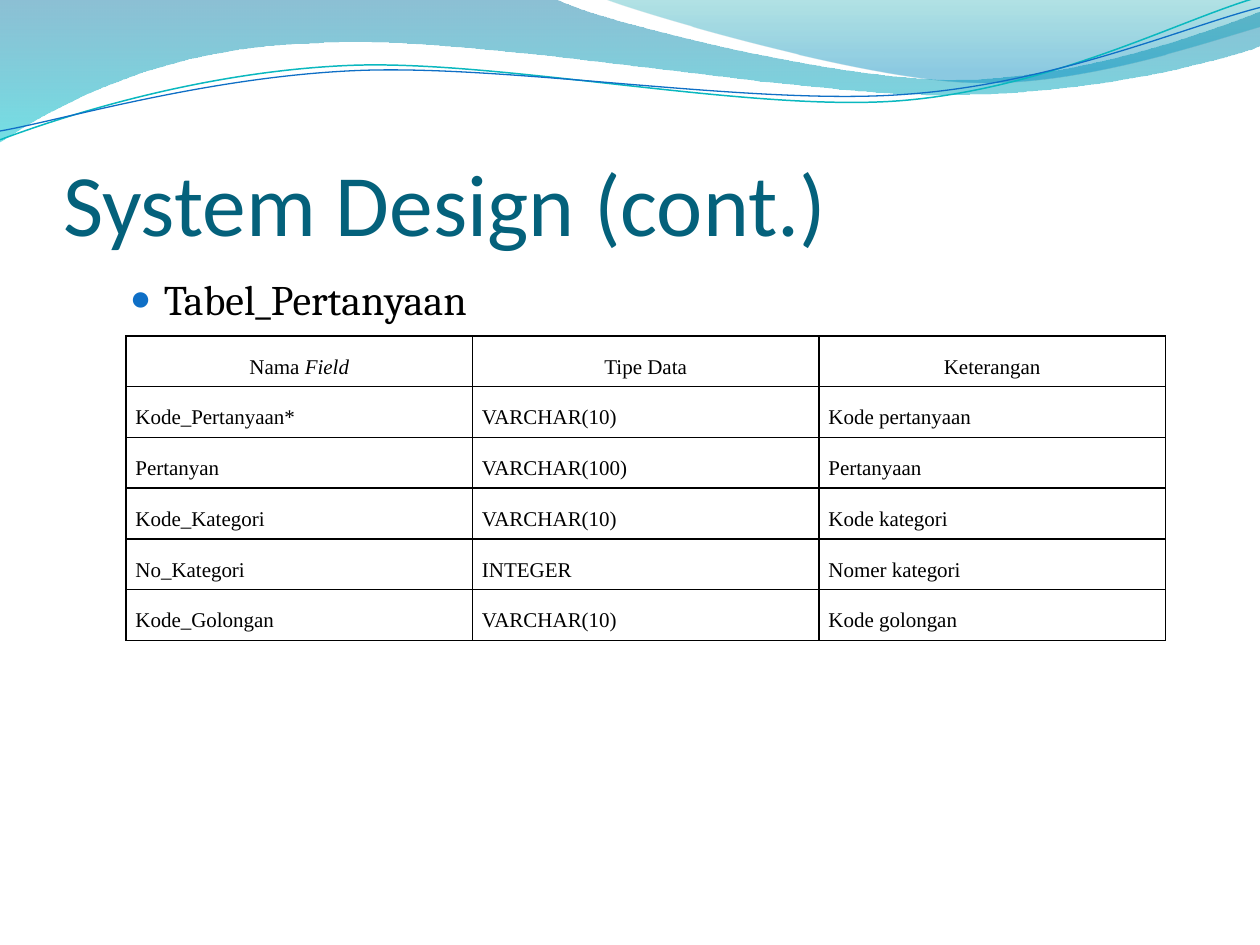
"""Build a slide with a wave banner, a title, a bullet and a table of fields."""
from math import cos, radians, sin
from lxml.etree import SubElement, fromstring
from pptx import Presentation
from pptx.dml.color import RGBColor
from pptx.enum.text import MSO_ANCHOR, MSO_AUTO_SIZE, PP_ALIGN
from pptx.oxml.ns import qn
from pptx.util import Inches, Pt

NS = 'xmlns:a="http://schemas.openxmlformats.org/drawingml/2006/main"'


def style(run, face, size, tint, **more):
    """Format a run of text."""
    run.font.color.rgb = RGBColor.from_string(tint)
    for key, val in dict(name=face, size=Pt(size), **more).items():
        setattr(run.font, key, val)


def turn(spot, hub, angle):
    """Rotate a point clockwise about a hub, into thousandths of an inch."""
    x, y = spot[0] - hub[0], spot[1] - hub[1]
    a = radians(angle)
    return (1000 * (hub[0] + x * cos(a) - y * sin(a)),
            1000 * (hub[1] + x * sin(a) + y * cos(a)))


deck = Presentation()
deck.slide_width, deck.slide_height = Inches(10), Inches(7.5)
wide = deck.slide_width
slide = deck.slides.add_slide(deck.slide_layouts[1])
tree = slide.shapes

waves = [
    ((0, 0), [(4.4, -0.01), (4.76, 0.17, 6.64, 0.63, 7.58, 0.63),
              (8.53, 0.63, 9.58, 0.26, 10, 0.09), (10.01, 0.36),
              (9.83, 0.44, 8.7, 0.76, 7.46, 0.75), (6.22, 0.75, 3.82, 0.28, 2.57, 0.34),
              (1.29, 0.36, 0.46, 0.83, -0.01, 1.13), (0, 0)],
     [(0, "0074A1", 45), (1, "00C6CF", 55)], None, (0, 0), 0),
    ((4.79, -0.01), [(5.09, 0.11, 6.82, 0.62, 7.69, 0.65),
                     (8.56, 0.69, 9.61, 0.32, 10, 0.21), (10, 0), (4.79, -0.01)],
     [(0, "00A1A9", 30), (0.8, "008BBF", 45)], None, (0, 0), 0),
    ((0, 1.11), [(0.48, 0.93, 1.58, 0.57, 2.77, 0.52), (3.95, 0.47, 5.93, 0.89, 7.13, 0.8),
                 (8.33, 0.71, 9.38, 0.15, 9.98, -0.02)],
     None, ("0AB8BF", 0.85), (4.99, 0.58), 2.7),
    ((0, 1.04), [(0.47, 0.96, 1.64, 0.61, 2.83, 0.56), (4.03, 0.51, 5.97, 0.84, 7.17, 0.75),
                 (8.36, 0.67, 9.41, 0.21, 10, 0.06)],
     None, ("0F6FC6", 0.75), (5, 0.59), 2.7),
]
for rank, (start, legs, stops, pen, hub, tilt) in enumerate(waves):
    pts = [turn(p, hub, tilt) for leg in legs for p in zip(leg[::2], leg[1::2])]
    draft = tree.build_freeform(*turn(start, hub, tilt), scale=914.4)
    draft.add_line_segments(pts, close=bool(stops))
    wave = draft.convert_to_shape()
    wave.shadow.inherit = False
    wave.rotation = -tilt % 360
    nodes = iter(list(wave._element.iter(qn("a:lnTo"))))
    for leg in legs:
        trio = [next(nodes) for _ in leg[::2]]
        if len(trio) == 3:
            curve = fromstring(f"<a:cubicBezTo {NS}/>")
            trio[0].addprevious(curve)
            for node in trio:
                curve.append(node[0])
                node.getparent().remove(node)
    if stops:
        wave.line.fill.background()
        wave.fill.gradient()
        wave.fill.gradient_angle = 270
        for stop, (spot, tint, _) in zip(wave.fill.gradient_stops, stops):
            stop.position = spot
            stop.color.rgb = RGBColor.from_string(tint)
        for node, (_, _, alpha) in zip(wave._element.iter(qn("a:gs")), stops):
            SubElement(node[0], qn("a:alpha"), val=str(alpha * 1000))
    else:
        wave.fill.background()
        wave.line.color.rgb = RGBColor.from_string(pen[0])
        wave.line.width = Pt(pen[1])
    tree._spTree.insert(2 + rank, wave._element)

title, body = tree.title, tree.placeholders[1]
for box, top, tall in ((title, 0.77, 1.25), (body, 2.12, 4.8)):
    box.left, box.top = int(wide * 0.05), Inches(top)
    box.width, box.height = int(wide * 0.9), Inches(tall)
    box.text_frame.auto_size = MSO_AUTO_SIZE.NONE

frame = title.text_frame
look = dict(margin_left=0, margin_right=0, margin_top=Inches(0.05), margin_bottom=0,
            vertical_anchor=MSO_ANCHOR.BOTTOM)
for key, val in look.items():
    setattr(frame, key, val)
head = frame.paragraphs[0]
head.alignment = PP_ALIGN.LEFT
head.add_run().text = "System Design (cont.)"
style(head.runs[0], "Calibri", 50, "04617B")

item = body.text_frame.paragraphs[0]
item.level = 1
item.add_run().text = "Tabel_Pertanyaan"
style(item.runs[0], "Cambria", 24, "000000")
props = item._p.get_or_add_pPr()
props.set("marL", str(Inches(0.7)))
props.set("indent", str(Inches(-0.27)))
for mark in ('<a:buClr {}><a:srgbClr val="0F6FC6"/></a:buClr>', '<a:buSzPct {} val="85000"/>',
             '<a:buFont {} typeface="Arial"/>', '<a:buChar {} char="●"/>'):
    props.append(fromstring(mark.format(NS)))

rows = [
    ("Nama Field", "Tipe Data", "Keterangan"),
    ("Kode_Pertanyaan*", "VARCHAR(10)", "Kode pertanyaan"),
    ("Pertanyan", "VARCHAR(100)", "Pertanyaan"),
    ("Kode_Kategori", "VARCHAR(10)", "Kode kategori"),
    ("No_Kategori", "INTEGER", "Nomer kategori"),
    ("Kode_Golongan", "VARCHAR(10)", "Kode golongan"),
]
grid = tree.add_table(len(rows), 3, int(wide * 0.1), Pt(192),
                      Inches(8.25), Pt(174)).table
grid.first_row = grid.horz_banding = False
look = dict(margin_left=Pt(5.4), margin_right=Pt(5.4), margin_top=0,
            margin_bottom=0, vertical_anchor=MSO_ANCHOR.MIDDLE)
for r, row in enumerate(rows):
    for c, text in enumerate(row):
        cell = grid.cell(r, c)
        for key, val in look.items():
            setattr(cell, key, val)
        cell.fill.background()
        for spot, side in enumerate("LRTB"):
            cell._tc.get_or_add_tcPr().insert(spot, fromstring(
                f'<a:ln{side} {NS} w="12700"><a:solidFill><a:srgbClr val="000000"/>'
                f'</a:solidFill></a:ln{side}>'))
        para = cell.text_frame.paragraphs[0]
        para.line_spacing = 1.5
        para.alignment = PP_ALIGN.LEFT if r else PP_ALIGN.CENTER
        for part in ("Nama ", "Field") if text == "Nama Field" else (text,):
            run = para.add_run()
            run.text = part
            style(run, "Times New Roman", 12, "000000", italic=part == "Field")

deck.save("out.pptx")
